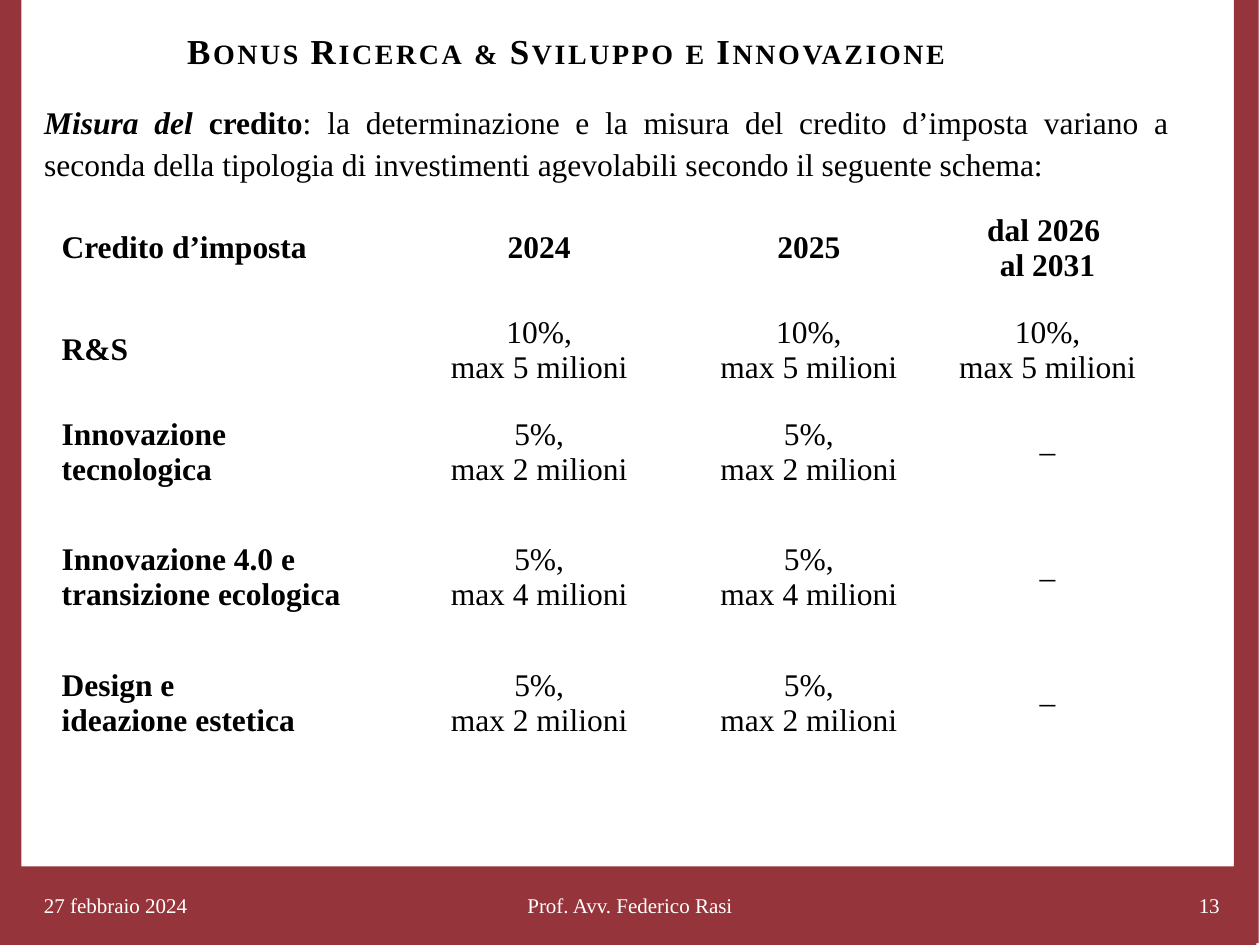
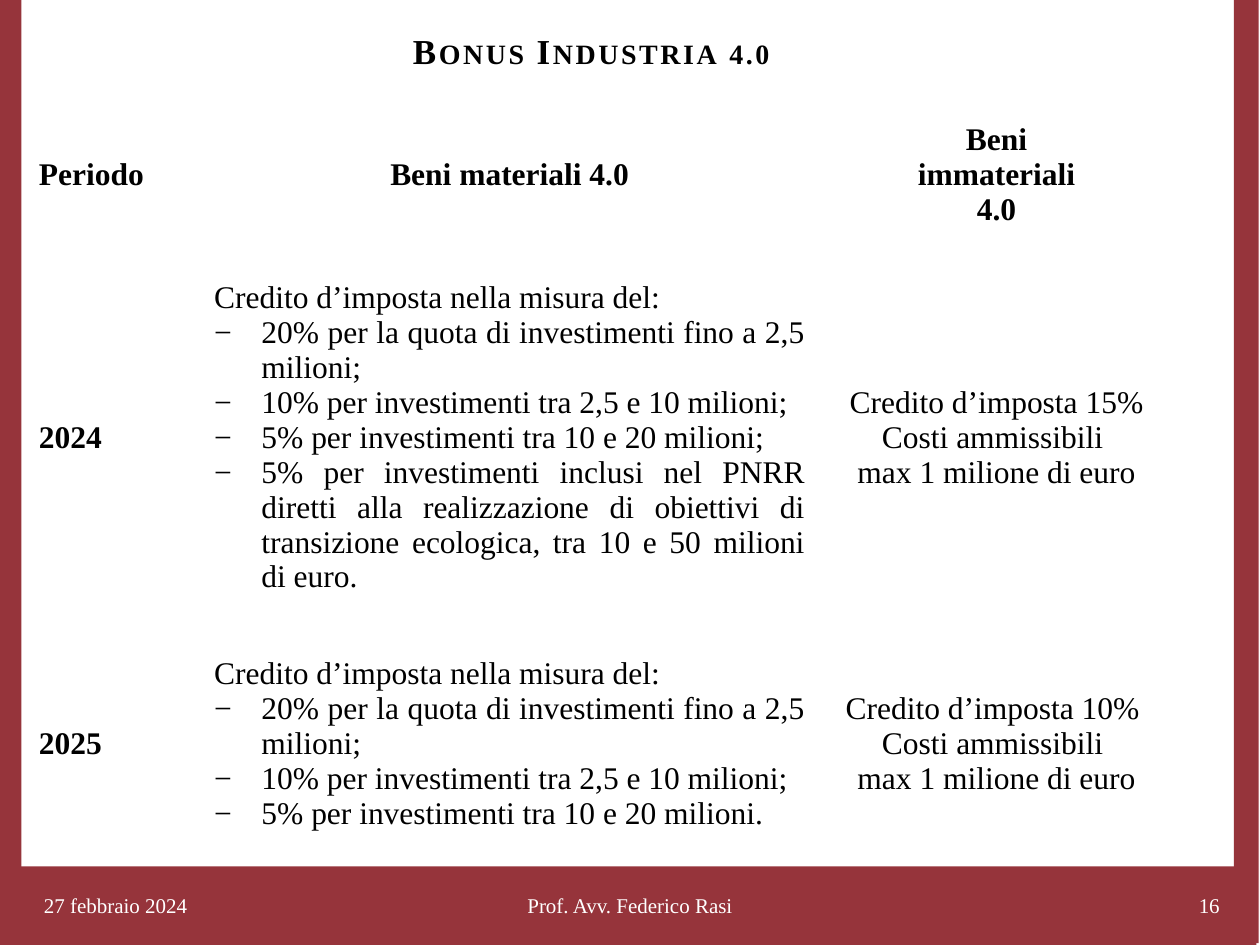
"""Build two slides on Italian tax credits for research and Industria 4.0."""
from lxml.etree import SubElement
from pptx import Presentation
from pptx.dml.color import RGBColor
from pptx.enum.shapes import MSO_SHAPE
from pptx.enum.text import MSO_ANCHOR, MSO_AUTO_SIZE, PP_ALIGN
from pptx.oxml import parse_xml
from pptx.oxml.ns import nsdecls, qn
from pptx.util import Pt

BURGUNDY = RGBColor(0x96, 0x34, 0x3B)
BLACK = RGBColor(0, 0, 0)
WHITE = RGBColor(255, 255, 255)
FONT = "Times New Roman"
BULLET = "−"

BANDS = [(-2, 495, 720, 46), (705, -1, 14.2, 540), (-2, 0, 14.2, 540)]
FOOTER_TOP, FOOTER_HEIGHT = 503.3, 27.4
LEFT, CENTER, RIGHT, JUSTIFY = PP_ALIGN.LEFT, PP_ALIGN.CENTER, PP_ALIGN.RIGHT, PP_ALIGN.JUSTIFY

RESEARCH_ROWS = [
    ["Credito d’imposta", "2024", "2025", "dal 2026 \nal 2031"],
    ["R&S"] + ["10%,\nmax 5 milioni"] * 3,
    ["Innovazione tecnologica"] + ["5%,\nmax 2 milioni"] * 2 + ["–"],
    ["Innovazione 4.0 e transizione ecologica"] + ["5%,\nmax 4 milioni"] * 2 + ["–"],
    ["Design e\nideazione estetica"] + ["5%,\nmax 2 milioni"] * 2 + ["–"],
]
INDUSTRY_ROWS = [
    ["Periodo", "Beni materiali 4.0", "Beni\nimmateriali\n4.0"],
    ["2024",
     "Credito d’imposta nella misura del:\n"
     "−20% per la quota di investimenti fino a 2,5 milioni;\n"
     "−10% per investimenti tra 2,5 e 10 milioni;\n"
     "−5% per investimenti tra 10 e 20 milioni;\n"
     "−5% per investimenti inclusi nel PNRR diretti alla realizzazione di obiettivi "
     "di transizione ecologica, tra 10 e 50 milioni di euro.",
     "Credito d’imposta 15%\nCosti ammissibili \nmax 1 milione di euro"],
    ["2025",
     "Credito d’imposta nella misura del:\n"
     "−20% per la quota di investimenti fino a 2,5 milioni;\n"
     "−10% per investimenti tra 2,5 e 10 milioni; \n"
     "−5% per investimenti tra 10 e 20 milioni.",
     "Credito d’imposta 10% \nCosti ammissibili \nmax 1 milione di euro"],
]
SLIDES = [
    {"layout": 1, "title": "Bonus Ricerca & Sviluppo e Innovazione", "number": "13",
     "rows": RESEARCH_ROWS, "left": 28, "top": 111.6, "insets": (7.2, 5.8),
     "widths": [193.7, 171.4, 136.8, 136.1], "heights": [58.3, 58.3, 58.3, 85, 58.3]},
    {"layout": 5, "title": "Bonus Industria 4.0", "number": "16",
     "rows": INDUSTRY_ROWS, "left": 18, "top": 60.5, "insets": (4.3, 4.3),
     "widths": [100.1, 346.3, 210.2], "heights": [76.3, 224.6, 125.3]},
]


def format_paragraph(paragraph, size, color=BLACK, bold=False, alignment=LEFT):
    paragraph.alignment = alignment
    for run in paragraph.runs:
        run.font.name = FONT
        run.font.size = Pt(size)
        run.font.bold = bold
        run.font.color.rgb = color


def place(shape, left, top, width, height):
    shape.left, shape.top = Pt(left), Pt(top)
    shape.width, shape.height = Pt(width), Pt(height)
    shape.text_frame.word_wrap = True
    shape.text_frame.auto_size = MSO_AUTO_SIZE.NONE


presentation = Presentation()
presentation.slide_width, presentation.slide_height = Pt(720), Pt(540)
master_tree = presentation.slide_master.shapes.element

for content in SLIDES:
    slide = presentation.slides.add_slide(presentation.slide_layouts[content["layout"]])

    if content is SLIDES[0]:
        for index, frame in enumerate(BANDS):
            band = slide.shapes.add_shape(MSO_SHAPE.RECTANGLE, *map(Pt, frame))
            band.shadow.inherit = False
            band.fill.solid()
            band.fill.fore_color.rgb = BURGUNDY
            band.line.fill.background()
            band.element.nvSpPr.cNvPr.set("id", str(100 + index))
            master_tree.insert(2 + index, band.element)

        body = slide.placeholders[1]
        place(body, 18, 53.3, 657.4, 242.6)
        paragraph = body.text_frame.paragraphs[0]
        for text in ("Misura del ", "credito",
                     ": la determinazione e la misura del credito d’imposta variano a seconda "
                     "della tipologia di investimenti agevolabili secondo il seguente schema:"):
            paragraph.add_run().text = text
        format_paragraph(paragraph, 18, alignment=JUSTIFY)
        paragraph.runs[0].font.bold = paragraph.runs[1].font.bold = True
        paragraph.runs[0].font.italic = True
        paragraph.line_spacing = 1.1
        paragraph.space_before = Pt(0)
        properties = paragraph._p.get_or_add_pPr()
        properties.set("marL", "0")
        properties.set("indent", "0")
        SubElement(properties, qn("a:buNone"))

    title = slide.shapes.title
    place(title, 0, 12.2, 704.2, 33.8)
    title.text_frame.text = content["title"]
    format_paragraph(title.text_frame.paragraphs[0], 20, bold=True, alignment=CENTER)
    title_properties = title.text_frame.paragraphs[0].runs[0].font._element
    title_properties.set("cap", "small")
    title_properties.set("spc", "150")

    for text, left, width, alignment in (
        ("27 febbraio 2024", 18, 137.5, LEFT),
        ("Prof. Avv. Federico Rasi", 238.3, 243.4, CENTER),
        (content["number"], 537.8, 166.3, RIGHT),
    ):
        footer = slide.shapes.add_textbox(0, 0, 0, 0)
        place(footer, left, FOOTER_TOP, width, FOOTER_HEIGHT)
        footer.text_frame.vertical_anchor = MSO_ANCHOR.MIDDLE
        footer.text_frame.text = text
        format_paragraph(footer.text_frame.paragraphs[0], 12, WHITE, alignment=alignment)

    rows, widths, heights = content["rows"], content["widths"], content["heights"]
    table = slide.shapes.add_table(
        len(rows), len(widths), Pt(content["left"]), Pt(content["top"]),
        Pt(sum(widths)), Pt(sum(heights))).table
    table.first_row = table.horz_banding = False
    for column, width in zip(table.columns, widths):
        column.width = Pt(width)
    for row_index, (row, height) in enumerate(zip(rows, heights)):
        table.rows[row_index].height = Pt(height)
        for column_index, text in enumerate(row):
            cell = table.cell(row_index, column_index)
            cell.vertical_anchor = MSO_ANCHOR.MIDDLE
            cell.margin_left, cell.margin_right = map(Pt, content["insets"])
            cell.margin_top, cell.margin_bottom = Pt(2.2), Pt(0)
            cell.fill.solid()
            cell.fill.fore_color.rgb = WHITE
            for position, side in enumerate(("lnL", "lnR", "lnT", "lnB")):
                heavy = (side == "lnB" and row_index == 0) or (side == "lnT" and row_index == 1)
                border = parse_xml(
                    f'<a:{side} {nsdecls("a")} w="{Pt(3 if heavy else 1)}"><a:solidFill>'
                    f'<a:srgbClr val="{WHITE}"/></a:solidFill></a:{side}>')
                cell._tc.get_or_add_tcPr().insert(position, border)

            cell.text_frame.text = text
            alignment = LEFT if column_index == 0 or BULLET in text else CENTER
            for paragraph in cell.text_frame.paragraphs:
                bulleted = paragraph.text.startswith(BULLET)
                if bulleted:
                    paragraph.text = paragraph.text[1:]
                    properties = paragraph._p.get_or_add_pPr()
                    properties.set("marL", str(Pt(27)))
                    properties.set("indent", str(Pt(-27)))
                    color = SubElement(properties, qn("a:buClr"))
                    SubElement(color, qn("a:srgbClr")).set("val", str(BLACK))
                    SubElement(properties, qn("a:buFont")).set("typeface", FONT)
                    SubElement(properties, qn("a:buChar")).set("char", BULLET)
                format_paragraph(paragraph, 18, bold=row_index == 0 or column_index == 0,
                                 alignment=JUSTIFY if bulleted else alignment)

presentation.save("out.pptx")
